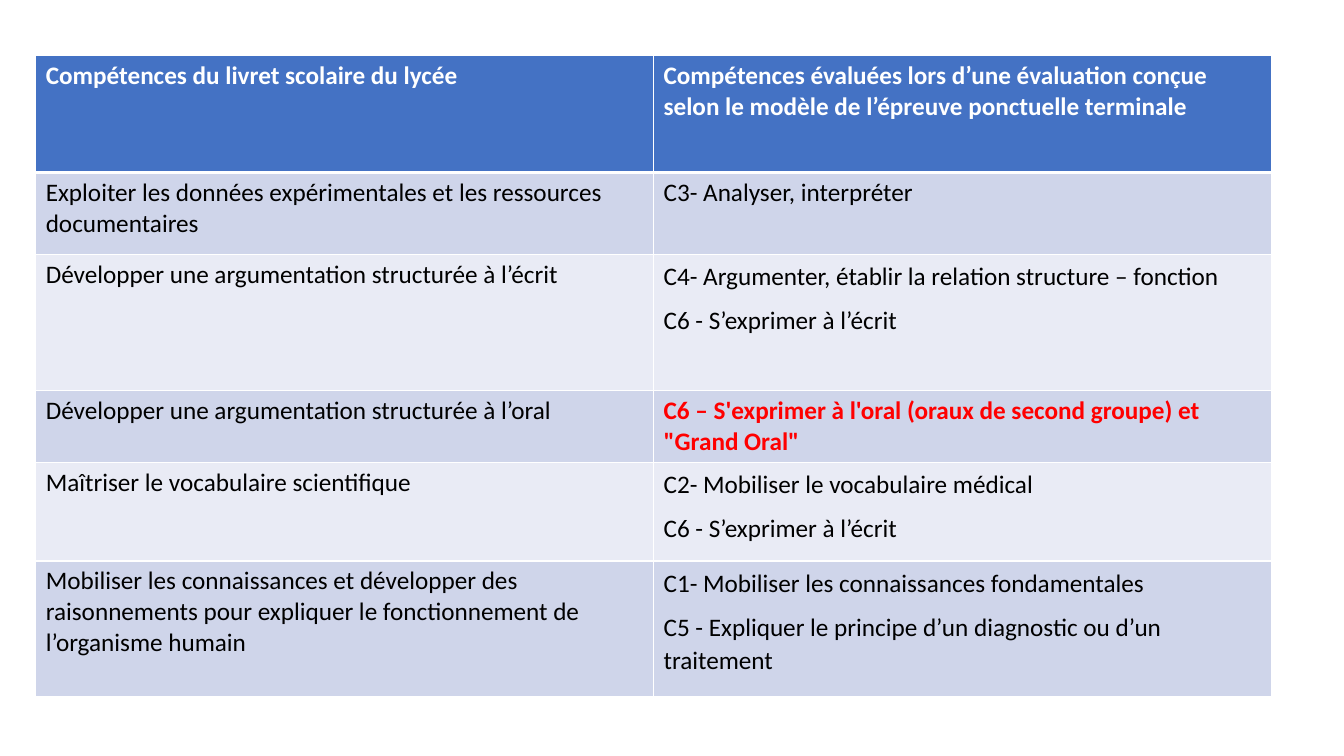
from lxml import etree
from pptx import Presentation
from pptx.dml.color import RGBColor
from pptx.oxml.ns import qn
from pptx.util import Cm, Pt

COLORS = {
    "head": "4472C4",
    "dark": "CFD5EA",
    "light": "E9EBF5",
    "white": "FFFFFF",
    "black": "000000",
    "red": "FF0000",
}

HEADS = [
    "Compétences du livret scolaire du lycée",
    "Compétences évaluées lors d’une évaluation conçue selon le modèle "
    "de l’épreuve ponctuelle terminale",
]
SKILLS = [
    ["Exploiter les données expérimentales et les ressources documentaires",
     "C3- Analyser, interpréter"],
    ["Développer une argumentation structurée à l’écrit",
     "C4- Argumenter, établir la relation structure – fonction\n"
     "C6 - S’exprimer à l’écrit"],
    ["Développer une argumentation structurée à l’oral",
     "C6 – S'exprimer à l'oral (oraux de second groupe) et \"Grand Oral\""],
    ["Maîtriser le vocabulaire scientifique",
     "C2- Mobiliser le vocabulaire médical\nC6 - S’exprimer à l’écrit"],
    ["Mobiliser les connaissances et développer des raisonnements pour "
     "expliquer le fonctionnement de l’organisme humain",
     "C1- Mobiliser les connaissances fondamentales\n"
     "C5 - Expliquer le principe d’un diagnostic ou d’un traitement"],
]
HEIGHTS = [2.95, 2.06, 3.43, 1.19, 2.49, 3.43]
WIDTH = 15.57
ORAL = (3, 1)  # row and column of the cell in red


class Deck:
    """Style and current slide."""

    def __init__(self, font, size):
        self.font, self.size = font, size
        self.prs = Presentation()
        self.prs.slide_width, self.prs.slide_height = Cm(33.87), Cm(19.05)
        self.slide = self.prs.slides.add_slide(self.prs.slide_layouts[6])

    def color(self, name):
        return RGBColor.from_string(COLORS[name])

    def border(self, cell, side, width):
        line = etree.SubElement(cell._tc.get_or_add_tcPr(), qn("a:ln" + side))
        line.set("w", str(Pt(width)))
        fill = etree.SubElement(line, qn("a:solidFill"))
        etree.SubElement(fill, qn("a:srgbClr")).set("val", COLORS["white"])

    def cell(self, cell, text, fill, ink, bold, top, bottom):
        # Borders come before the fill in the cell properties
        for side, width in (("L", 1), ("R", 1), ("T", top), ("B", bottom)):
            self.border(cell, side, width)
        cell.fill.solid()
        cell.fill.fore_color.rgb = self.color(fill)
        cell.text_frame.text = text
        paras = cell.text_frame.paragraphs
        for para in paras:
            if len(paras) > 1:
                para.line_spacing, para.space_after = 1.07, Pt(8)
            for run in para.runs:
                run.font.name, run.font.size = self.font, Pt(self.size)
                run.font.bold = bold
                run.font.color.rgb = self.color(ink)

    def table(self, left, top, width, heights, rows, accent):
        count = len(rows[0])
        frame = self.slide.shapes.add_table(
            len(rows), count, Cm(left), Cm(top),
            Cm(width * count), Cm(sum(heights)))
        grid = frame.table
        for col in grid.columns:
            col.width = Cm(width)
        for r, texts in enumerate(rows):
            grid.rows[r].height = Cm(heights[r])
            fill = "head" if r == 0 else "dark" if r % 2 else "light"
            for c, text in enumerate(texts):
                red = (r, c) == accent
                ink = "white" if r == 0 else "red" if red else "black"
                self.cell(grid.cell(r, c), text, fill, ink, r == 0 or red,
                          3 if r == 1 else 1, 3 if r == 0 else 1)


def main():
    deck = Deck("Calibri", 18)
    # Skills table: header row, then banded rows
    deck.table(0.9, 1.4, WIDTH, HEIGHTS, [HEADS] + SKILLS, ORAL)
    deck.prs.save("out.pptx")


if __name__ == "__main__":
    main()
